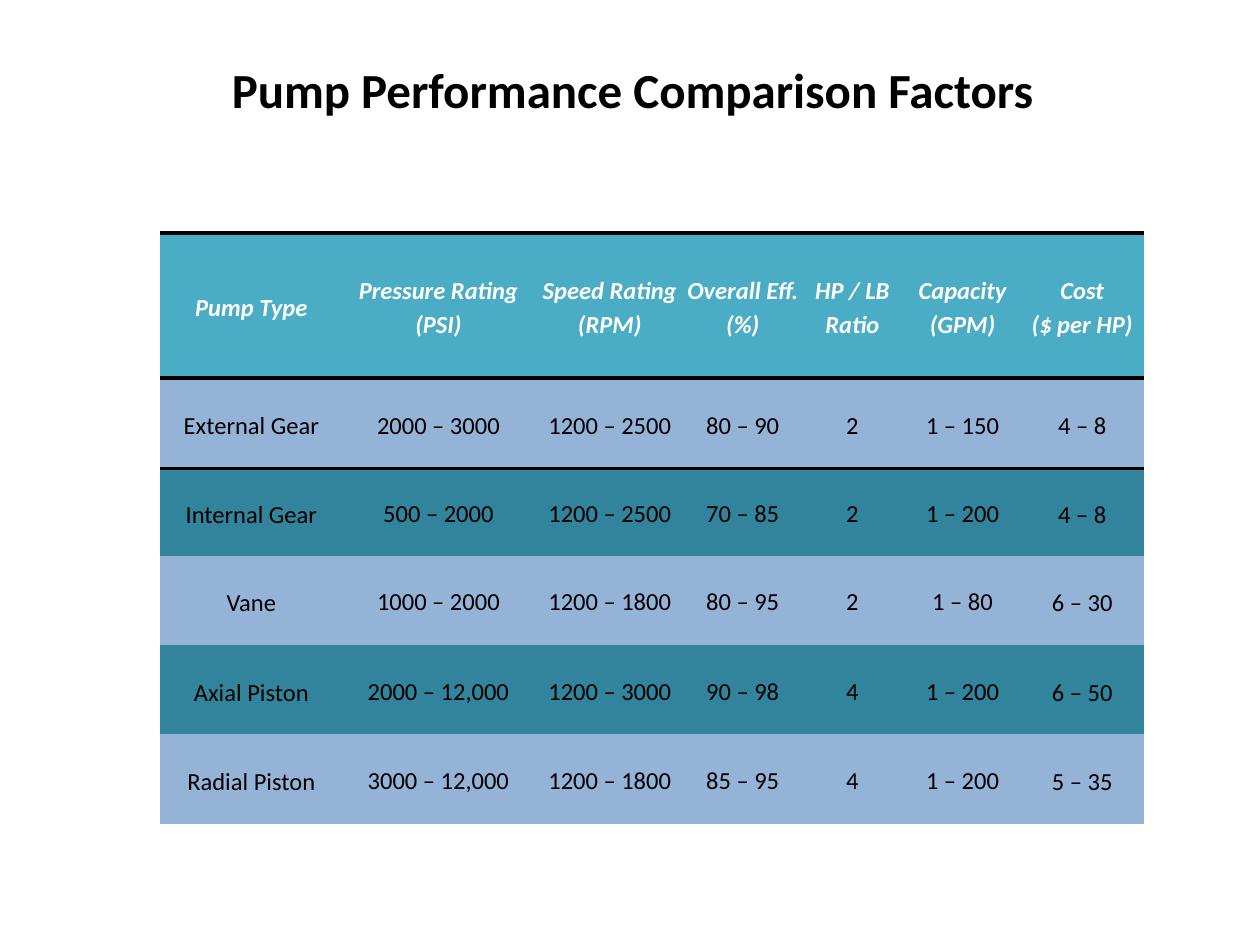
from lxml.etree import SubElement
from pptx import Presentation
from pptx.dml.color import RGBColor
from pptx.enum.text import MSO_ANCHOR, PP_ALIGN
from pptx.oxml import parse_xml
from pptx.oxml.ns import nsdecls, qn
from pptx.util import Inches, Pt

TITLE = "Pump Performance Comparison Factors"
HEADER = ["Pump Type", "Pressure Rating (PSI)", "Speed Rating (RPM)", "Overall Eff. (%)",
          "HP / LB Ratio", "Capacity (GPM)", "Cost\n($ per HP)"]
PUMPS = [
    ["External Gear", "2000 – 3000", "1200 – 2500", "80 – 90", "2", "1 – 150", "4 – 8"],
    ["Internal Gear", "500 – 2000", "1200 – 2500", "70 – 85", "2", "1 – 200", "4 – 8"],
    ["Vane", "1000 – 2000", "1200 – 1800", "80 – 95", "2", "1 – 80", "6 – 30"],
    ["Axial Piston", "2000 – 12,000", "1200 – 3000", "90 – 98", "4", "1 – 200", "6 – 50"],
    ["Radial Piston", "3000 – 12,000", "1200 – 1800", "85 – 95", "4", "1 – 200", "5 – 35"],
]
COLUMN_WIDTHS = [1.45, 1.52, 1.2, 0.91, 0.83, 0.92, 0.98]
ROW_HEIGHTS = [1.15, 0.72, 0.69, 0.71, 0.71, 0.71]

BLACK = RGBColor(0, 0, 0)
WHITE = RGBColor(255, 255, 255)
TEAL = RGBColor(0x4B, 0xAC, 0xC6)
BANDS = [RGBColor(0x95, 0xB3, 0xD7), RGBColor(0x31, 0x84, 0x9B)]
HEADER_FONT = {"size": Pt(14), "bold": True, "italic": True}
BODY_FONT = {"size": Pt(14), "bold": False, "italic": False}
TITLE_FONT = {"size": Pt(28), "bold": True}
NO_STYLE = "{2D5ABB26-0587-4C30-8999-92F81FD0307C}"


def write(frame, text, font, color, spacing=1.0):
    frame.text = text
    for para in frame.paragraphs:
        para.alignment = PP_ALIGN.CENTER
        para.line_spacing = spacing
        for span in para.runs:
            span.font.name = "Calibri"
            span.font.color.rgb = color
            for name, value in font.items():
                setattr(span.font, name, value)


def add_rules(cell, sides):
    """Draw black lines on the given sides ("T", "B") of a cell."""
    for position, side in enumerate(sides):
        line = parse_xml(
            f'<a:ln{side} {nsdecls("a")} w="{Pt(2.25)}"><a:solidFill>'
            f'<a:srgbClr val="{BLACK}"/></a:solidFill></a:ln{side}>')
        cell._tc.get_or_add_tcPr().insert(position, line)


def add_title(page):
    box = page.shapes.add_textbox(Inches(0.52), Inches(0.21), Inches(9), Inches(1))
    box.text_frame.word_wrap = True
    box.text_frame.vertical_anchor = MSO_ANCHOR.MIDDLE
    write(box.text_frame, TITLE, TITLE_FONT, BLACK)


def add_pump_table(page):
    rows = [HEADER, *PUMPS]
    table = page.shapes.add_table(
        len(rows), len(HEADER), Inches(1.27), Inches(1.85),
        Inches(sum(COLUMN_WIDTHS)), Inches(sum(ROW_HEIGHTS))).table
    table._tbl.tblPr.find(qn("a:tableStyleId")).text = NO_STYLE
    for column, width in zip(table.columns, COLUMN_WIDTHS):
        column.width = Inches(width)
    for row, height in zip(table.rows, ROW_HEIGHTS):
        row.height = Inches(height)

    for r, values in enumerate(rows):
        for c, value in enumerate(values):
            cell = table.cell(r, c)
            is_edge = c in (0, len(HEADER) - 1)
            cell.margin_left = cell.margin_right = Inches(0.07 if is_edge else 0)
            cell.margin_top = Inches(0.01 if is_edge else 0)
            cell.margin_bottom = 0
            cell.vertical_anchor = MSO_ANCHOR.MIDDLE
            cell.fill.solid()
            cell.fill.fore_color.rgb = BANDS[(r - 1) % 2] if r else TEAL
            font, color = (BODY_FONT, BLACK) if r else (HEADER_FONT, WHITE)
            write(cell.text_frame, value, font, color, spacing=1.15)
            add_rules(cell, {0: "TB", 1: "T"}.get(r, ""))
            if r and c:
                tabs = SubElement(cell.text_frame.paragraphs[0]._p.get_or_add_pPr(),
                                  qn("a:tabLst"))
                SubElement(tabs, qn("a:tab"), pos=str(Inches(0.25)), algn="dec")


def main():
    deck = Presentation()
    deck.slide_width, deck.slide_height = Inches(10), Inches(7.5)
    page = deck.slides.add_slide(deck.slide_layouts[6])
    add_title(page)
    add_pump_table(page)
    deck.save("out.pptx")


if __name__ == "__main__":
    main()
